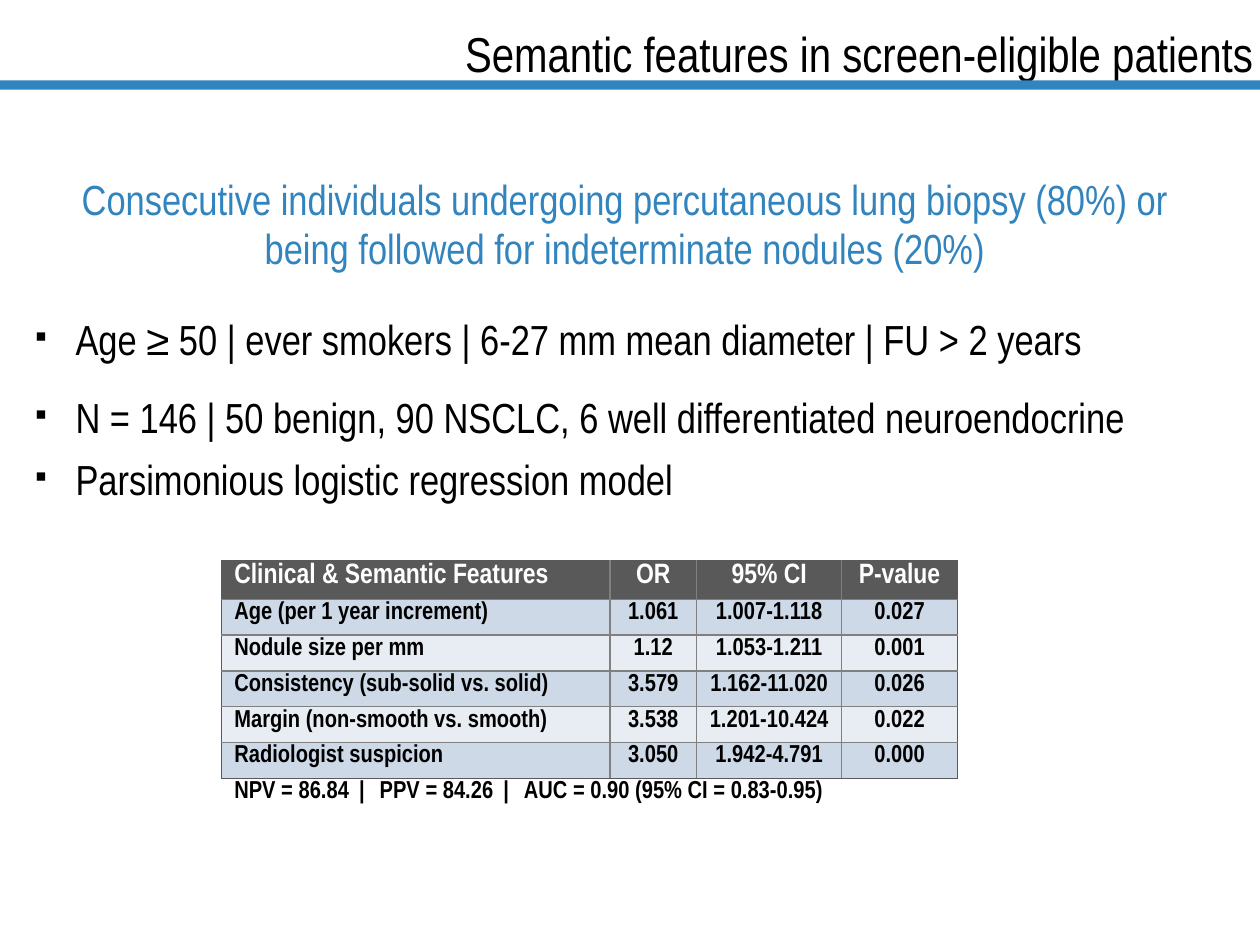
from dataclasses import dataclass

from lxml import etree
from pptx import Presentation
from pptx.dml.color import RGBColor
from pptx.enum.shapes import MSO_SHAPE
from pptx.enum.text import MSO_ANCHOR, PP_ALIGN
from pptx.oxml.ns import qn
from pptx.util import Inches, Pt

RECTANGLE = MSO_SHAPE.RECTANGLE
TOP, BOTTOM = MSO_ANCHOR.TOP, MSO_ANCHOR.BOTTOM
LEFT, CENTER, RIGHT = PP_ALIGN.LEFT, PP_ALIGN.CENTER, PP_ALIGN.RIGHT
FONT = "Arial Narrow"
WIDTH, HEIGHT = Inches(10), Inches(7.5)
COLORS = {
    "text": "000000", "accent": "3284BE", "white": "FFFFFF", "header": "595959",
    "grid": "808080", "odd": "CED9E8", "even": "E8EDF4",
}
COLUMNS = (3.08, 0.69, 1.15, 0.92)
HEADER_HEIGHT, ROW_HEIGHT = 0.31, 0.284
FEATURES = (
    ("Clinical & Semantic Features", "OR", "95% CI", "P-value"),
    ("Age (per 1 year increment)", "1.061", "1.007-1.118", "0.027"),
    ("Nodule size per mm", "1.12", "1.053-1.211", "0.001"),
    ("Consistency (sub-solid vs. solid)", "3.579", "1.162-11.020", "0.026"),
    ("Margin (non-smooth vs. smooth)", "3.538", "1.201-10.424", "0.022"),
    ("Radiologist suspicion", "3.050", "1.942-4.791", "0.000"),
)
SUMMARY = ("NPV = 86.84", "PPV = 84.26", "AUC = 0.90 (95% CI = 0.83-0.95)")


@dataclass(frozen=True)
class Area:
    """A rectangle given as shares of the slide's size."""
    left: float
    top: float
    width: float
    height: float

    def lengths(self) -> tuple[int, ...]:
        """Return left, top, width and height as slide lengths."""
        return (int(self.left * WIDTH), int(self.top * HEIGHT),
                int(self.width * WIDTH), int(self.height * HEIGHT))


@dataclass(frozen=True)
class Bullet:
    """A bulleted line and its spacing in points."""
    text: str
    before: float = 0
    after: float = 0
    line: float | None = None


BULLETS = (
    Bullet("Age ≥ 50 | ever smokers | 6-27 mm mean diameter | FU > 2 years", 16),
    Bullet("N = 146 | 50 benign, 90 NSCLC, 6 well differentiated neuroendocrine", 16, 7.2),
    Bullet("Parsimonious logistic regression model", line=28),
)
TITLE = Area(0.176, 0, 0.818, 0.087)
RULE = Area(0, 0.085, 1, 0.01)
BODY = Area(0.028, 0.185, 0.943, 0.673)
TABLE = Area(0.176, 0.593, 0.584, 0.27)


def color(name: str) -> RGBColor:
    """Look up a named colour."""
    return RGBColor.from_string(COLORS[name])


def add_span(para, text: str, size: float, ink: str, bold: bool = False):
    """Add one formatted run to a paragraph."""
    span = para.add_run()
    span.text = text
    span.font.name, span.font.size, span.font.bold = FONT, Pt(size), bold
    span.font.color.rgb = color(ink)
    return span


def clear_margins(frame, anchor) -> None:
    """Make a text frame wrap, without margins."""
    frame.word_wrap, frame.vertical_anchor = True, anchor
    frame.margin_left = frame.margin_right = frame.margin_top = frame.margin_bottom = 0


def add_title(page) -> None:
    """Place and fill the title placeholder."""
    title = page.shapes.title
    title.left, title.top, title.width, title.height = TITLE.lengths()
    clear_margins(title.text_frame, BOTTOM)
    para = title.text_frame.paragraphs[0]
    para.alignment = RIGHT
    add_span(para, "Semantic features in screen-eligible patients", 28, "text")


def add_rule(page) -> None:
    """Draw the bar under the title."""
    rule = page.shapes.add_shape(RECTANGLE, *RULE.lengths())
    rule.shadow.inherit = False
    rule.fill.solid()
    rule.fill.fore_color.rgb = color("accent")
    rule.line.fill.background()


def add_bullet(frame, bullet: Bullet) -> None:
    """Add one bulleted paragraph."""
    para = frame.add_paragraph()
    para.space_before, para.space_after = Pt(bullet.before), Pt(bullet.after)
    if bullet.line:
        para.line_spacing = Pt(bullet.line)
    properties = para._p.get_or_add_pPr()
    properties.set("marL", str(Inches(0.32)))
    properties.set("indent", str(-Inches(0.32)))
    etree.SubElement(properties, qn("a:buSzPct"), val="80000")
    etree.SubElement(properties, qn("a:buFont"), typeface=FONT)
    etree.SubElement(properties, qn("a:buChar"), char="▪")
    add_span(para, bullet.text, 24, "text")


def add_body(page) -> None:
    """Add the cohort statement and its bullets."""
    frame = page.shapes.add_textbox(*BODY.lengths()).text_frame
    clear_margins(frame, TOP)
    para = frame.paragraphs[0]
    para.alignment = CENTER
    para.line_spacing, para.space_after = Pt(28), Pt(7.2)
    add_span(para, "Consecutive individuals undergoing percutaneous lung biopsy (80%) or ", 24, "accent")
    para.add_line_break()
    add_span(para, "being followed for indeterminate nodules (20%) ", 24, "accent")
    for bullet in BULLETS:
        add_bullet(frame, bullet)


def set_borders(cell, left: str, right: str, top: str, bottom: str) -> None:
    """Draw the four borders of a cell; an empty name means no line."""
    properties = cell._tc.get_or_add_tcPr()
    for side, name in zip("LRTB", (left, right, top, bottom)):
        line = etree.SubElement(properties, qn(f"a:ln{side}"), w=str(Pt(1)))
        if name:
            solid = etree.SubElement(line, qn("a:solidFill"))
            etree.SubElement(solid, qn("a:srgbClr"), val=COLORS[name])
        else:
            etree.SubElement(line, qn("a:noFill"))


def format_cell(cell, side: float, alignment):
    """Set a cell's margins and alignment and return its paragraph."""
    cell.margin_left = cell.margin_right = Inches(side)
    cell.margin_top = cell.margin_bottom = Inches(0.02)
    cell.vertical_anchor = TOP
    para = cell.text_frame.paragraphs[0]
    para.alignment = alignment
    return para


def add_features(page) -> None:
    """Add the regression table with its summary row."""
    last_row, last_column = len(FEATURES) - 1, len(COLUMNS) - 1
    table = page.shapes.add_table(len(FEATURES) + 1, len(COLUMNS), *TABLE.lengths()).table
    for column, width in zip(table.columns, COLUMNS):
        column.width = Inches(width)
    for index, row in enumerate(table.rows):
        row.height = Inches(ROW_HEIGHT if index else HEADER_HEIGHT)
    for row, values in enumerate(FEATURES):
        fill = ("odd" if row % 2 else "even") if row else "header"
        size, ink = (14, "text") if row else (16, "white")
        for column, value in enumerate(values):
            cell = table.cell(row, column)
            side = 0.03 if row and column else 0.1
            para = format_cell(cell, side, CENTER if column else LEFT)
            add_span(para, value, size, ink, True)
            edges = (column == 0, column == last_column, row == 0, row == last_row)
            set_borders(cell, *("header" if edge else "grid" for edge in edges))
            cell.fill.solid()
            cell.fill.fore_color.rgb = color(fill)
    for column in range(len(COLUMNS)):
        cell = table.cell(last_row + 1, column)
        set_borders(cell, "", "", "header", "")
        cell.fill.background()
    summary = table.cell(last_row + 1, 0)
    summary.merge(table.cell(last_row + 1, last_column))
    para = format_cell(summary, 0.1, LEFT)
    for index, text in enumerate(SUMMARY):
        if index:
            separator = add_span(para, " | ", 14, "text", True)
            separator._r.get_or_add_rPr().set("spc", "260")
        add_span(para, text, 14, "text", True)


def main() -> None:
    """Build and save the deck."""
    deck = Presentation()
    deck.slide_width, deck.slide_height = WIDTH, HEIGHT
    page = deck.slides.add_slide(deck.slide_layouts[5])
    add_rule(page)
    add_title(page)
    add_body(page)
    add_features(page)
    deck.save("out.pptx")


if __name__ == "__main__":
    main()
